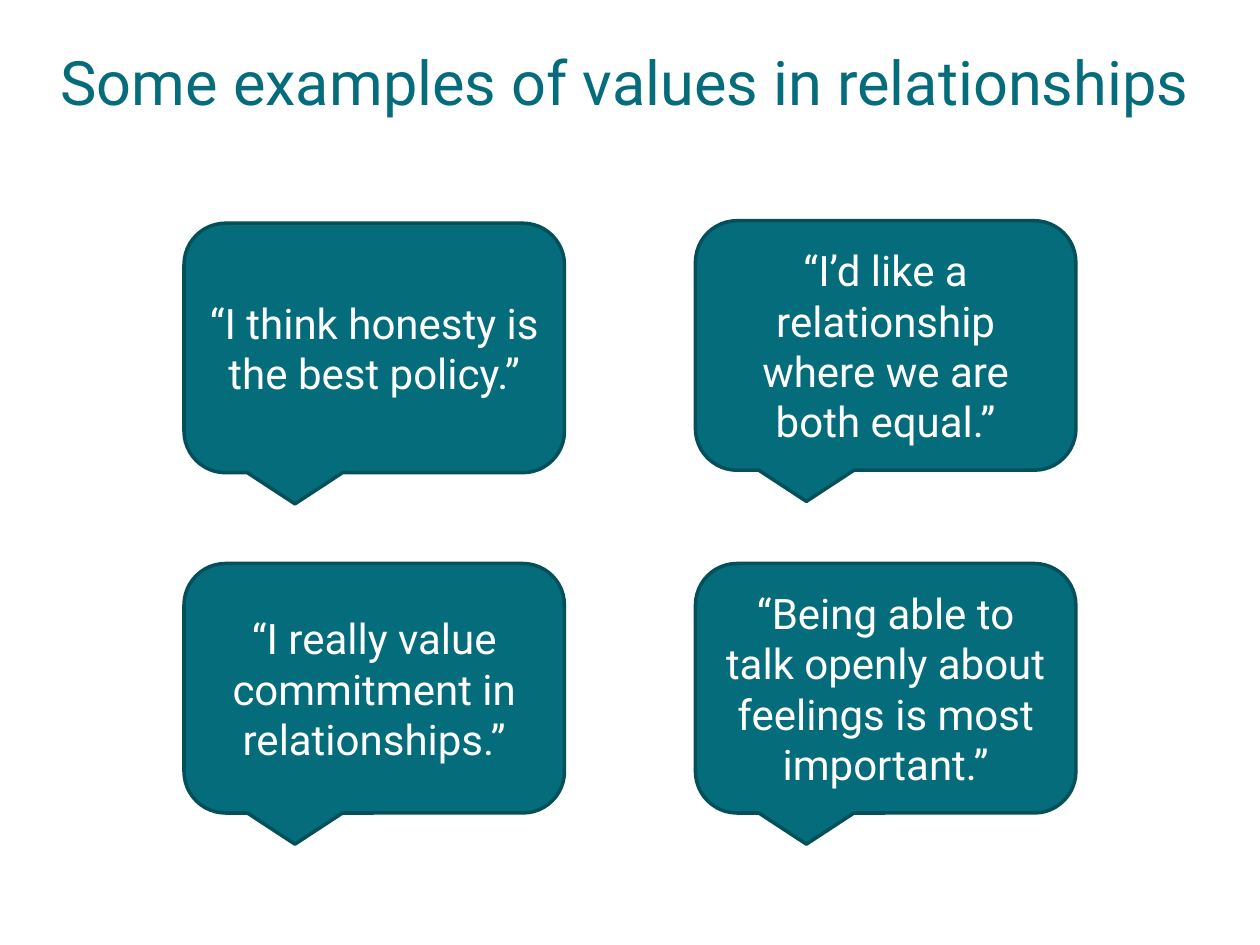
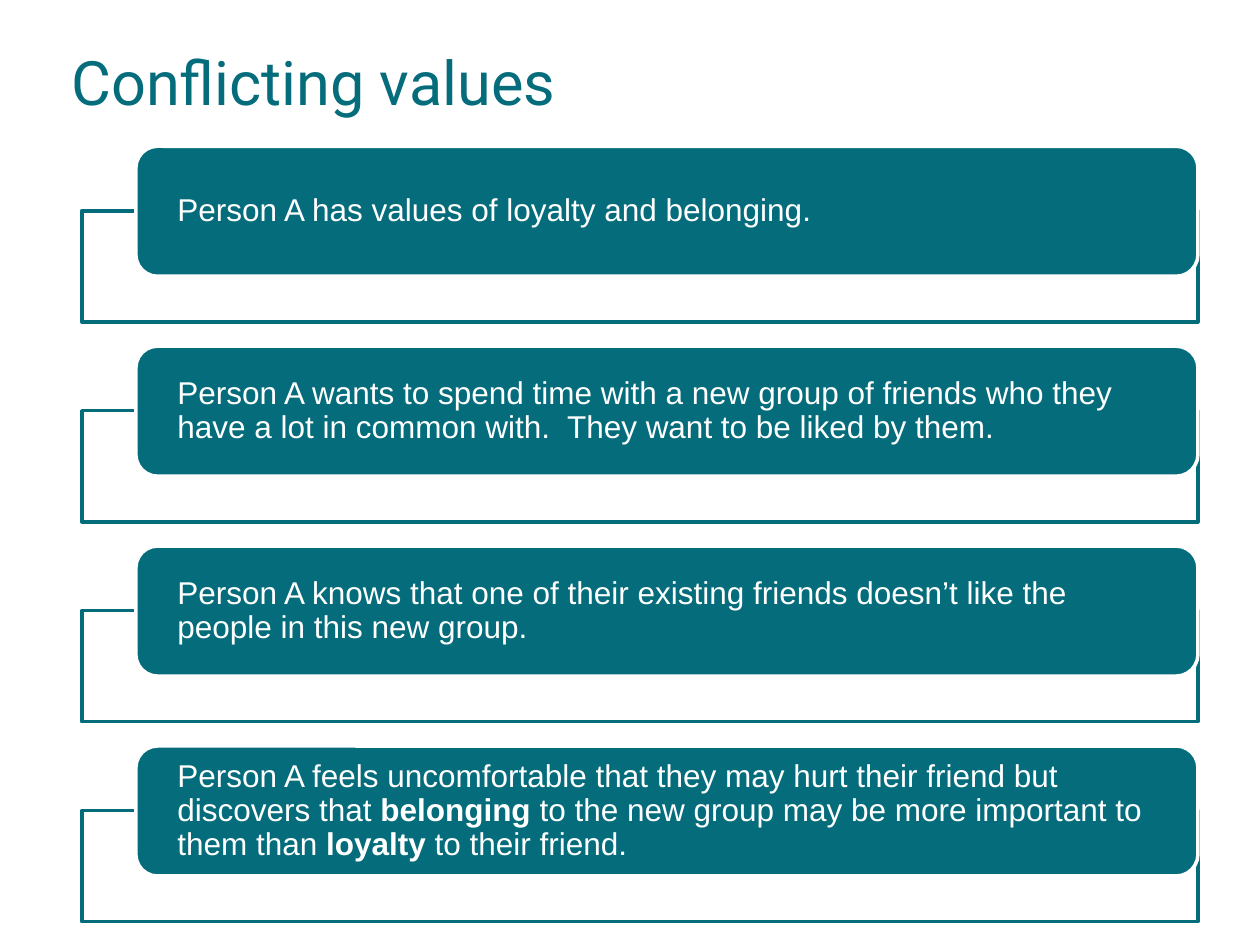
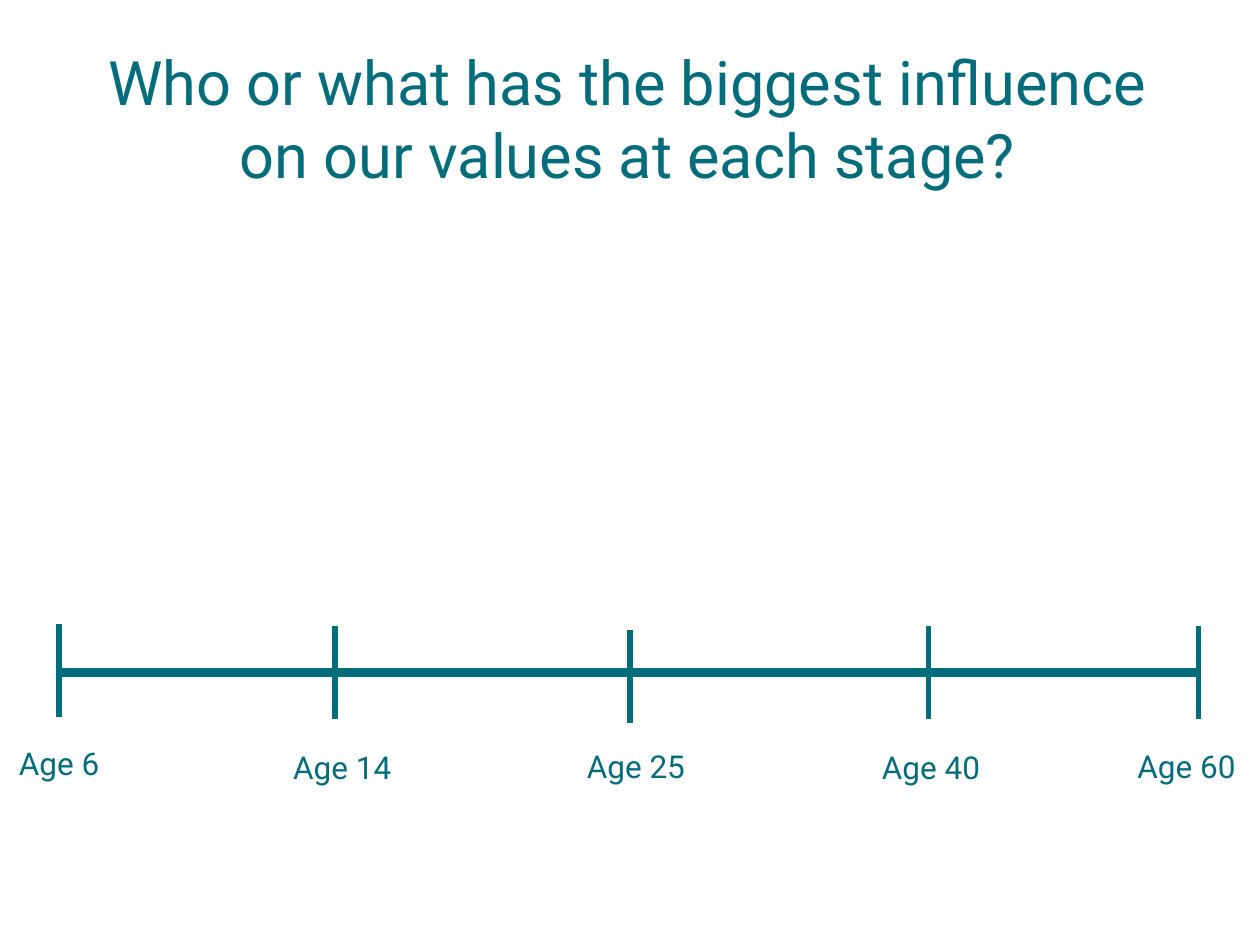
from pptx import Presentation
from pptx.dml.color import RGBColor
from pptx.enum import shapes as sh, text as tx
from pptx.oxml import ns
from pptx.util import Cm, Pt
from lxml import etree

TEAL = RGBColor(0x04, 0x6C, 0x7B)
DEEP = RGBColor(0x03, 0x50, 0x5B)
AXIS = RGBColor(0x01, 0x6C, 0x7B)
WHITE = RGBColor(0xFF, 0xFF, 0xFF)
HEAD = "Roboto"
BODY = "Arial"
LEFT = tx.PP_ALIGN.LEFT
MID = tx.PP_ALIGN.CENTER
KIND = sh.MSO_SHAPE

WIDE = (0.61, 0.76, 23.98, 2.9)
TITLE = (1.19, 0.76, 22.94, 2.9)

QUOTES = [
    (0, 0.05, "“I think honesty is the best policy.”"),
    (0, 6.91, "“I really value commitment in relationships.”"),
    (10.31, 0, "“I’d like a relationship where we are both equal.”"),
    (10.31, 6.91, "“Being able to talk openly about feelings is most important.”"),
]
STEPS = [
    ["Person A has values of loyalty and belonging."],
    ["Person A wants to spend time with a new group of friends who they "
     "have a lot in common with.  They want to be liked by them."],
    ["Person A knows that one of their existing friends doesn’t like the "
     "people in this new group."],
    ["Person A feels uncomfortable that they may hurt their friend but discovers that ",
     "belonging", " to the new group may be more important to them than ",
     "loyalty", " to their friend."],
]
AGES = [
    ("Age 6", 0, 0, -1.06, 2.31),
    ("Age 14", 5.57, 0.05, 4.47, 2.39),
    ("Age 25", 11.51, 0.13, 10.39, 2.37),
    ("Age 40", 17.53, 0.05, 16.34, 2.39),
    ("Age 60", 22.97, 0.05, 21.49, 2.37),
]


def write(frame, parts, font, size, color, align=LEFT):
    frame.word_wrap = True
    para = frame.paragraphs[0]
    para.alignment = align
    for i, part in enumerate(parts):
        run = para.add_run()
        run.text = part
        if i % 2:
            run.font.bold = True
    para.font.name = font
    para.font.size = Pt(size)
    para.font.color.rgb = color
    return para


def label(slide, box, words, size, align=LEFT):
    area = slide.shapes.add_textbox(*map(Cm, box))
    write(area.text_frame, [words], HEAD, size, TEAL, align)


def block(slide, kind, box, fill, line):
    shape = slide.shapes.add_shape(kind, *map(Cm, box))
    shape.shadow.inherit = False
    shape.fill.solid()
    shape.fill.fore_color.rgb = fill
    shape.line.color.rgb = line
    shape.line.width = Pt(2)
    shape.text_frame.vertical_anchor = tx.MSO_ANCHOR.MIDDLE
    return shape


def rule(slide, ends, width):
    line = slide.shapes.add_connector(sh.MSO_CONNECTOR.STRAIGHT, *map(Cm, ends))
    line.line.color.rgb = AXIS
    line.line.width = Pt(width)
    etree.SubElement(line._element.spPr, ns.qn("a:effectLst"))


def bubbles(slide, left, top):
    for x, y, quote in QUOTES:
        box = (left + x, top + y, 7.67, 5.03)
        shape = block(slide, KIND.ROUNDED_RECTANGULAR_CALLOUT, box, TEAL, DEEP)
        write(shape.text_frame, [quote], HEAD, 24, WHITE, MID)


def step(slide, box, parts):
    left, top, width, height = box
    block(slide, KIND.RECTANGLE, (left, top + 1.3, width, height - 1.3), WHITE, TEAL)
    card = block(slide, KIND.ROUNDED_RECTANGLE,
                 (left + 1.09, top, width - 1.09, 2.62), TEAL, WHITE)
    frame = card.text_frame
    frame.margin_left = frame.margin_right = Cm(0.71)
    frame.margin_top = frame.margin_bottom = Cm(0.13)
    write(frame, parts, BODY, 18, WHITE).line_spacing = 0.9


def steps(slide, left, top):
    for i, parts in enumerate(STEPS):
        step(slide, (left, top + i * 4.03, 22.5, 3.54), parts)


def ages(slide, left, top):
    rule(slide, (left, top + 0.99, left + 22.97, top + 0.99), 5)
    for name, x, y, side, drop in AGES:
        rule(slide, (left + x, top + y, left + x, top + y + 1.88), 3.25)
        label(slide, (left + side, top + drop, 2.57, 1.02), name, 18)


def page(deck, title, box, align):
    slide = deck.slides.add_slide(deck.slide_layouts[6])
    label(slide, box, title, 35, align)
    return slide


def main():
    deck = Presentation()
    deck.slide_width = Cm(25.4)
    deck.slide_height = Cm(19.05)
    bubbles(page(deck, "Some examples of values in relationships", WIDE, MID), 3.71, 4.45)
    steps(page(deck, "Conflicting values", TITLE, LEFT), 1.65, 2.95)
    ages(page(deck, "Who or what has the biggest influence on our values at each stage?",
              TITLE, MID), 1.19, 12.57)
    deck.save("out.pptx")


if __name__ == "__main__":
    main()
